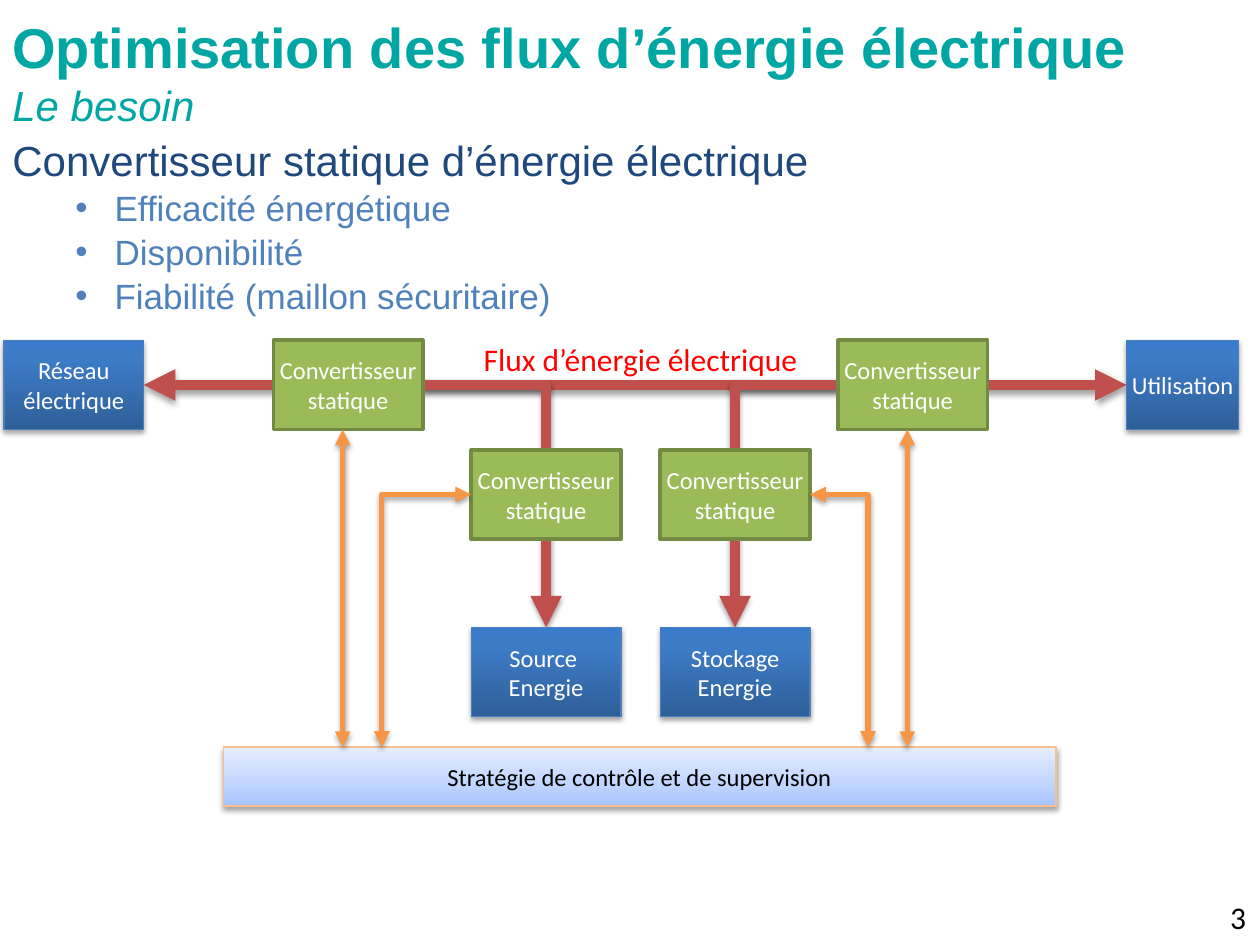
import pptx
import pptx.dml.color
import pptx.enum.shapes
import pptx.enum.text
import pptx.oxml
import pptx.oxml.ns
import pptx.util
from lxml import etree
from pptx.util import Cm

qn = pptx.oxml.ns.qn
ALIGN = pptx.enum.text.PP_ALIGN
ANCHOR = pptx.enum.text.MSO_ANCHOR
CONNECTOR = pptx.enum.shapes.MSO_CONNECTOR

BLUE_STOPS = [(0, "2F5F99"), (80, "3D7CC7"), (100, "3A7CCB")]
PALE_STOPS = [(0, "A4C4FF"), (35, "BFD4FF"), (100, "E6EEFF")]
RED_FLOW = {"color": "C0504D", "width": 6}
ORANGE_CONTROL = {"color": "F79646", "width": 3}
BOX_WIDTH, BOX_HEIGHT = 3.02, 1.8
TOP_ROW, CONVERTER_ROW, STORAGE_ROW, CONTROL_ROW = 6.86, 9.07, 12.65, 15.06
LEFT_COLUMN, RIGHT_COLUMN = 9.5, 13.31
LEFT_CONVERTER, RIGHT_CONVERTER = 5.51, 16.89


def rgb(value):
    return pptx.dml.color.RGBColor.from_string(value)


def set_attributes(target, values):
    for name, value in values.items():
        setattr(target, name, value)


def set_font(font, size, color, name="Calibri", **styles):
    set_attributes(font, {"size": pptx.util.Pt(size), "name": name, **styles})
    font.color.rgb = rgb(color)


def set_line(line, color, width):
    line.color.rgb = rgb(color)
    line.width = pptx.util.Pt(width)


def set_frame(frame, horizontal, vertical, anchor, wrap=True):
    set_attributes(frame, {
        "margin_left": Cm(horizontal), "margin_right": Cm(horizontal),
        "margin_top": Cm(vertical), "margin_bottom": Cm(vertical),
        "vertical_anchor": anchor, "word_wrap": wrap,
    })


def add_shadow(properties):
    for empty in properties.findall(qn("a:effectLst")):
        properties.remove(empty)
    properties.append(pptx.oxml.parse_xml(
        f'<a:effectLst {pptx.oxml.ns.nsdecls("a")}>'
        '<a:outerShdw blurRad="40000" dist="22000" dir="5400000" rotWithShape="0">'
        '<a:srgbClr val="000000"><a:alpha val="36000"/></a:srgbClr>'
        '</a:outerShdw></a:effectLst>'))


def set_gradient(shape, stops):
    shape.fill.gradient()
    shape.fill.gradient_angle = 90
    stop_list = shape._element.spPr.find(".//" + qn("a:gsLst"))
    for old_stop in list(stop_list):
        stop_list.remove(old_stop)
    for position, color in stops:
        stop = etree.SubElement(stop_list, qn("a:gs"), pos=str(position * 1000))
        etree.SubElement(stop, qn("a:srgbClr"), val=color)


def add_box(slide, text, left, top, width=BOX_WIDTH, height=BOX_HEIGHT,
            fill=BLUE_STOPS, line=("4B7EBC", 0.75), color="FFFFFF"):
    shape = slide.shapes.add_shape(
        pptx.enum.shapes.MSO_SHAPE.RECTANGLE, Cm(left), Cm(top), Cm(width), Cm(height))
    shape.shadow.inherit = False
    set_line(shape.line, *line)
    if isinstance(fill, str):
        shape.fill.solid()
        shape.fill.fore_color.rgb = rgb(fill)
    else:
        set_gradient(shape, fill)
        add_shadow(shape._element.spPr)
    frame = shape.text_frame
    set_frame(frame, 0.1, 0.3, ANCHOR.MIDDLE)
    frame.text = text
    for paragraph in frame.paragraphs:
        paragraph.alignment = ALIGN.CENTER
        set_font(paragraph.font, 14, color)


def add_converter(slide, left, top):
    add_box(slide, "Convertisseur\nstatique", left, top, fill="9BBB59", line=("738A42", 2))


def add_arrow(slide, start, end, style, both_ends=True):
    straight = start[0] == end[0] or start[1] == end[1]
    kind = CONNECTOR.STRAIGHT if straight else CONNECTOR.ELBOW
    connector = slide.shapes.add_connector(kind, *(Cm(value) for value in start + end))
    set_line(connector.line, **style)
    properties = connector._element.spPr
    if not straight:
        properties.find(qn("a:prstGeom")).set("prst", "bentConnector2")
    line = properties.find(qn("a:ln"))
    for tag in ["a:headEnd", "a:tailEnd"] if both_ends else ["a:tailEnd"]:
        etree.SubElement(line, qn(tag), type="triangle")
    add_shadow(properties)


def add_text(slide, left, top, width, height, vertical=0.13, wrap=True):
    box = slide.shapes.add_textbox(Cm(left), Cm(top), Cm(width), Cm(height))
    set_frame(box.text_frame, 0.25, vertical, ANCHOR.TOP, wrap)
    return box.text_frame


def add_label(slide, text, left, top, width, color, alignment=ALIGN.LEFT, wrap=True):
    paragraph = add_text(slide, left, top, width, 1.02, wrap=wrap).paragraphs[0]
    paragraph.text = text
    paragraph.alignment = alignment
    set_font(paragraph.font, 18, color)


def add_title(slide, title, subtitle):
    paragraph = add_text(slide, 0, 0, 25.4, 2.01, vertical=0.25).paragraphs[0]
    title_run = paragraph.add_run()
    title_run.text = title
    set_font(title_run.font, 32, "00A6A4", "Arial", bold=True)
    paragraph.add_line_break()
    subtitle_run = paragraph.add_run()
    subtitle_run.text = subtitle
    set_font(subtitle_run.font, 24, "00A6A4", "Arial", italic=True)


def add_needs(slide, heading, needs):
    frame = add_text(slide, 0, 2.51, 25.4, 3.99, vertical=0.2)
    frame.text = heading
    set_font(frame.paragraphs[0].font, 24, "1F497D", "Arial")
    for need in needs:
        paragraph = frame.add_paragraph()
        paragraph.text = need
        paragraph.level = 1
        paragraph.space_before = pptx.util.Pt(1)
        properties = paragraph._p.get_or_add_pPr()
        properties.set("marL", str(Cm(2.06)))
        properties.set("indent", str(Cm(-0.79)))
        etree.SubElement(properties, qn("a:buFont"), typeface="Arial")
        etree.SubElement(properties, qn("a:buChar"), char="•")
        set_font(paragraph.font, 20, "4F81BD", "Arial")


def add_flows(slide):
    flow_level = TOP_ROW + BOX_HEIGHT / 2
    add_arrow(slide, (2.9, flow_level), (22.71, flow_level), RED_FLOW)
    for start, column in [(LEFT_CONVERTER + BOX_WIDTH, LEFT_COLUMN),
                          (RIGHT_CONVERTER, RIGHT_COLUMN)]:
        end = (column + BOX_WIDTH / 2, STORAGE_ROW)
        add_arrow(slide, (start, flow_level), end, RED_FLOW, both_ends=False)


def add_controls(slide):
    for column in (6.91, 18.29):
        add_arrow(slide, (column, CONTROL_ROW), (column, TOP_ROW + BOX_HEIGHT), ORANGE_CONTROL)
    control_level = CONVERTER_ROW + BOX_HEIGHT / 2
    for start, column in [(LEFT_COLUMN, 7.7), (RIGHT_COLUMN + BOX_WIDTH, 17.5)]:
        add_arrow(slide, (start, control_level), (column, CONTROL_ROW), ORANGE_CONTROL)


def main():
    presentation = pptx.Presentation()
    presentation.slide_width = Cm(25.4)
    presentation.slide_height = Cm(19.05)
    slide = presentation.slides.add_slide(presentation.slide_layouts[6])

    add_label(slide, "3", 23.57, 17.98, 1.8, "000000", ALIGN.RIGHT)
    add_flows(slide)
    add_title(slide, "Optimisation des flux d’énergie électrique", "Le besoin")
    add_box(slide, "Réseau\vélectrique", 0.08, TOP_ROW, width=2.82)
    add_box(slide, "Utilisation", 22.71, TOP_ROW, width=2.26)
    for left, top in [(LEFT_CONVERTER, TOP_ROW), (RIGHT_CONVERTER, TOP_ROW),
                      (LEFT_COLUMN, CONVERTER_ROW), (RIGHT_COLUMN, CONVERTER_ROW)]:
        add_converter(slide, left, top)
    add_box(slide, "Source \vEnergie", LEFT_COLUMN, STORAGE_ROW)
    add_box(slide, "Stockage\vEnergie", RIGHT_COLUMN, STORAGE_ROW)
    add_label(slide, "Flux d’énergie électrique", 9.5, 6.73, 6.96, "FF0000", wrap=False)
    add_box(slide, "Stratégie de contrôle et de supervision", 4.5, CONTROL_ROW, 16.79, 1.19,
            fill=PALE_STOPS, line=("FAC090", 0.75), color="000000")
    add_controls(slide)
    add_needs(slide, "Convertisseur statique d’énergie électrique",
              ["Efficacité énergétique", "Disponibilité", "Fiabilité (maillon sécuritaire)"])
    presentation.save("out.pptx")


if __name__ == "__main__":
    main()
